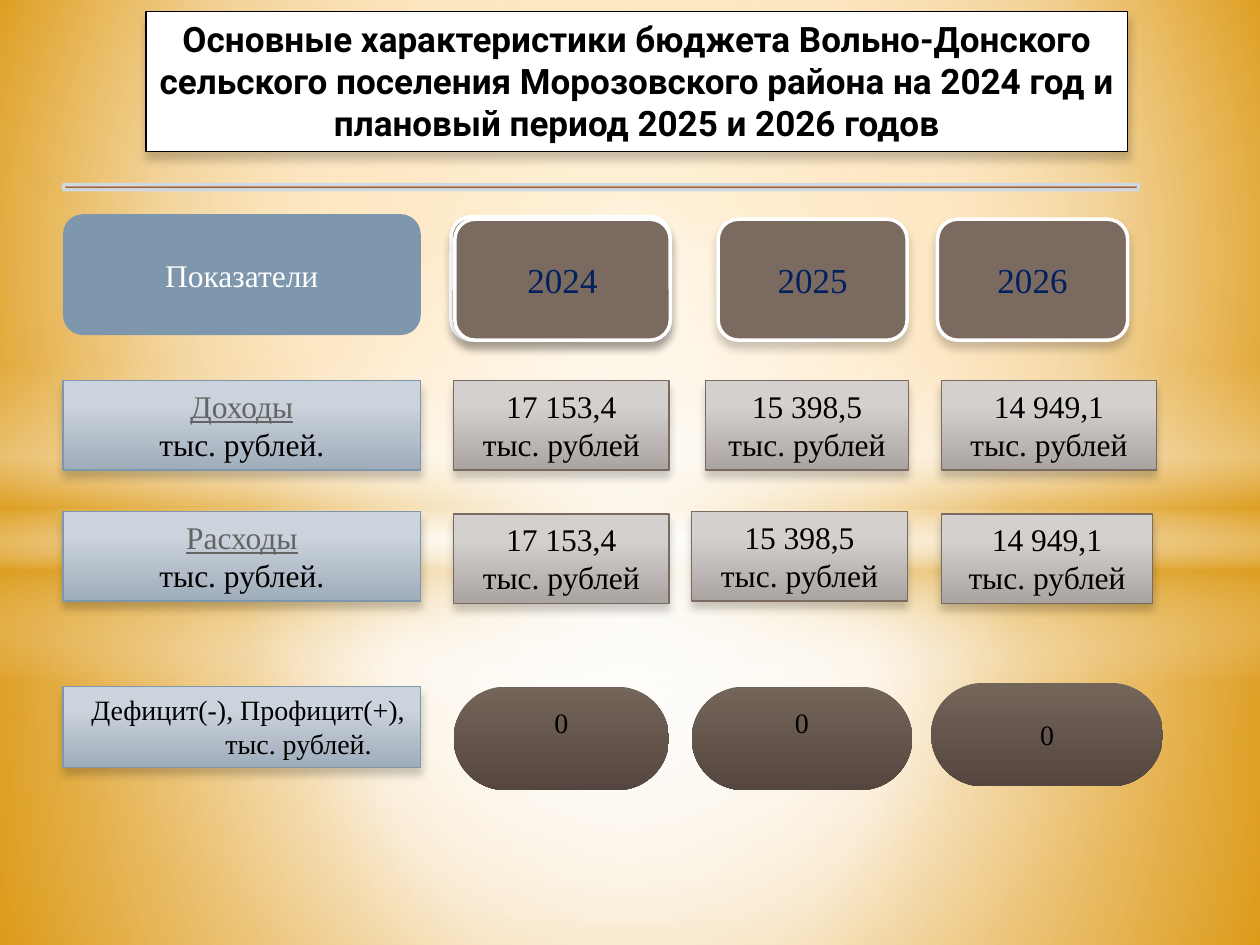
from dataclasses import dataclass
from typing import Optional, Union

from lxml.etree import SubElement
from pptx import Presentation
from pptx.dml.color import RGBColor
from pptx.enum.shapes import MSO_SHAPE
from pptx.enum.text import MSO_ANCHOR, PP_ALIGN
from pptx.oxml.ns import qn
from pptx.util import Inches, Pt

COLUMNS, ROWS = 100, 75
SERIF = "Times New Roman"
RECTANGLE, ROUNDED, OVAL = MSO_SHAPE.RECTANGLE, MSO_SHAPE.ROUNDED_RECTANGLE, MSO_SHAPE.OVAL

presentation = Presentation()
presentation.slide_width = Inches(10)
presentation.slide_height = Inches(7.5)


@dataclass(frozen=True)
class Box:
    column: float
    row: float
    columns: float
    rows: float


@dataclass(frozen=True)
class Gradient:
    stops: tuple
    path_kind: Optional[str] = None
    focus: tuple = (50, 50, 50, 50)


@dataclass(frozen=True)
class Style:
    fill: Union[str, Gradient]
    geometry: int = RECTANGLE
    line: Optional[str] = None
    line_width: float = 0.75
    shadow: bool = False
    size: float = 18
    color: str = "000000"
    anchor: MSO_ANCHOR = MSO_ANCHOR.MIDDLE
    font: str = SERIF
    bold: bool = False
    radius: Optional[float] = None


LABEL = Style(Gradient(((28, "CBD3DC"), (100, "9FACBA"))), line="7E97AD", shadow=True,
              anchor=MSO_ANCHOR.TOP)
BALANCE_LABEL = Style(LABEL.fill, line="7E97AD", shadow=True, size=16, anchor=MSO_ANCHOR.TOP)
AMOUNT = Style(Gradient(((28, "D3D0CE"), (100, "AAA4A1"))), line="7A6A60", shadow=True,
               anchor=MSO_ANCHOR.TOP)
YEAR = Style("7A6A60", ROUNDED, "FFFFFF", 2, True, 20, "002060")
HEADER = Style("7E97AD", ROUNDED, color="FFFFFF")
BALANCE = Style(Gradient(((0, "74655B"), (100, "55473F"))), ROUNDED, size=16, radius=0.5)
TITLE = Style("FFFFFF", line="000000", shadow=True, size=20, anchor=MSO_ANCHOR.TOP,
              font="Roboto", bold=True)
DIVIDER = Style(Gradient(((0, "AA6837"), (50, "CFD9E3"), (100, "E7ECF1")), "rect"),
                ROUNDED, "CFD9E3", 1.25)

BACKGROUND = Gradient(((0, "FFA607"), (60, "F9CD88"), (100, "E08E02")), "circle", (20, 10, 20, 60))
GLOWS = (
    (Box(0, 42.3, 100, 32.7), RECTANGLE,
     Gradient(((0, "FFFFFF", 91), (37, "FFFFFF", 76), (100, "DC9E1F", 79)), "circle")),
    (Box(0, 0, 100, 42.3), RECTANGLE,
     Gradient(((0, "FFFFFF", 89), (48, "FFFFFF", 62), (100, "DC9E1F", 79)), "circle")),
    (Box(0, 29, 100, 25), RECTANGLE,
     Gradient(((0, "FFFFFF", 0), (29, "FFFFFF", 30), (45, "DC9E1F", 40),
               (55, "FFFFFF", 26), (65, "DC9E1F", 60), (100, "FFFFFF", 0)))),
    (Box(0, 17.5, 100, 55.8), OVAL,
     Gradient(((0, "FFFFFF"), (54, "FFFFFF", 0)), "circle")),
)

YEARS = (("2024", 36.1, 17.1), ("2025", 57, 15), ("2026", 74.4, 15.1))
LABELS = (("Доходы", 30.2), ("Расходы", 40.6))
AMOUNTS = (
    ("17 153,4", Box(36, 30.2, 17.1, 7.1)),
    ("15 398,5", Box(56, 30.2, 16.1, 7.1)),
    ("14 949,1", Box(74.7, 30.2, 17.1, 7.1)),
    ("17 153,4", Box(36, 40.8, 17.1, 7.1)),
    ("15 398,5", Box(54.9, 40.6, 17.1, 7.1)),
    ("14 949,1", Box(74.7, 40.8, 16.8, 7.1)),
)
BALANCES = (
    (Box(36, 54.5, 17.1, 8.2), 0.3),
    (Box(54.9, 54.5, 17.5, 8.2), 0.3),
    (Box(73.9, 54.2, 18.4, 8.2), 0.05),
)


def rgb(color: str) -> RGBColor:
    return RGBColor.from_string(color)


def add_color(parent, color: str, alpha: float = 100) -> None:
    element = SubElement(parent, qn("a:srgbClr"), val=color)
    if alpha < 100:
        SubElement(element, qn("a:alpha"), val=str(alpha * 1000))


def apply_gradient(properties, gradient: Gradient) -> None:
    solid = properties.find(qn("a:solidFill"))
    fill = properties.makeelement(qn("a:gradFill"), {"rotWithShape": "1"})
    properties.replace(solid, fill)
    stops = SubElement(fill, qn("a:gsLst"))
    for position, *color in gradient.stops:
        add_color(SubElement(stops, qn("a:gs"), pos=str(position * 1000)), *color)
    if gradient.path_kind:
        shading = SubElement(fill, qn("a:path"), {"path": gradient.path_kind})
        sides = {side: str(share * 1000) for side, share in zip("ltrb", gradient.focus)}
        SubElement(shading, qn("a:fillToRect"), sides)
    else:
        SubElement(fill, qn("a:lin"), ang="5400000", scaled="0")


def place(shape, box: Box) -> None:
    column, row = presentation.slide_width / COLUMNS, presentation.slide_height / ROWS
    shape.left, shape.top = int(box.column * column), int(box.row * row)
    shape.width, shape.height = int(box.columns * column), int(box.rows * row)


def format_shape(shape, style: Style) -> None:
    shape.fill.solid()
    if isinstance(style.fill, Gradient):
        apply_gradient(shape.element.spPr, style.fill)
    else:
        shape.fill.fore_color.rgb = rgb(style.fill)
    if style.line:
        shape.line.color.rgb = rgb(style.line)
        shape.line.width = Pt(style.line_width)
    else:
        shape.line.fill.background()
    shape.shadow.inherit = False
    if style.shadow:
        effects = shape.element.spPr.find(qn("a:effectLst"))
        shadow = SubElement(effects, qn("a:outerShdw"), blurRad=str(Pt(5)), dist=str(Pt(4)),
                            dir="5400000", rotWithShape="0")
        add_color(shadow, "000000", 20)


def write(shape, text: str, style: Style) -> None:
    frame = shape.text_frame
    frame.text = text
    frame.word_wrap = True
    frame.vertical_anchor = style.anchor
    for paragraph in frame.paragraphs:
        paragraph.alignment = PP_ALIGN.CENTER
        for run in paragraph.runs:
            run.font.name = style.font
            run.font.size = Pt(style.size)
            run.font.bold = style.bold
            run.font.color.rgb = rgb(style.color)


def add_block(slide, box: Box, style: Style, text: str = ""):
    shape = slide.shapes.add_shape(style.geometry, 0, 0, 0, 0)
    place(shape, box)
    if style.radius is not None:
        shape.adjustments[0] = style.radius
    format_shape(shape, style)
    if text:
        write(shape, text, style)
    return shape


def build() -> None:
    slide = presentation.slides.add_slide(presentation.slide_layouts[5])
    slide.background.fill.solid()
    apply_gradient(slide.element.find(".//" + qn("p:bgPr")), BACKGROUND)
    title = slide.shapes.title
    for box, geometry, gradient in GLOWS:
        glow = add_block(slide, box, Style(gradient, geometry))
        title.element.addprevious(glow.element)

    place(title, Box(11.6, 0.9, 77.9, 11.1))
    format_shape(title, TITLE)
    write(title, "Основные характеристики бюджета Вольно-Донского\v"
                 "сельского поселения Морозовского района на 2024 год и\v"
                 "плановый период 2025 и 2026 годов", TITLE)
    add_block(slide, Box(5, 14.6, 85.4, 0.5), DIVIDER)

    add_block(slide, Box(5, 17, 28.4, 9.6), HEADER, "Показатели")
    add_block(slide, Box(35.8, 17.2, 17.4, 9.8), YEAR)
    for year, column, columns in YEARS:
        add_block(slide, Box(column, 17.4, columns, 9.6), YEAR, year)

    for name, row in LABELS:
        label = add_block(slide, Box(5, row, 28.4, 7.1), LABEL, f"{name}\nтыс. рублей.")
        font = label.text_frame.paragraphs[0].runs[0].font
        font.underline = True
        font.color.rgb = rgb("646464")
    for amount, box in AMOUNTS:
        add_block(slide, box, AMOUNT, f"{amount}\nтыс. рублей")

    balance_label = add_block(slide, Box(5, 54.5, 28.4, 6.4), BALANCE_LABEL,
                              "Дефицит(-), Профицит(+),\nтыс. рублей.")
    for paragraph, indent in zip(balance_label.text_frame.paragraphs, (0.1, 0.9)):
        paragraph.element.get_or_add_pPr().set("marL", str(Inches(indent))) if hasattr(
            paragraph, "element") else paragraph._p.get_or_add_pPr().set("marL", str(Inches(indent)))
    for box, bottom in BALANCES:
        balance = add_block(slide, box, BALANCE, "0")
        balance.text_frame.margin_bottom = Inches(bottom)


if __name__ == "__main__":
    build()
    presentation.save("out.pptx")
